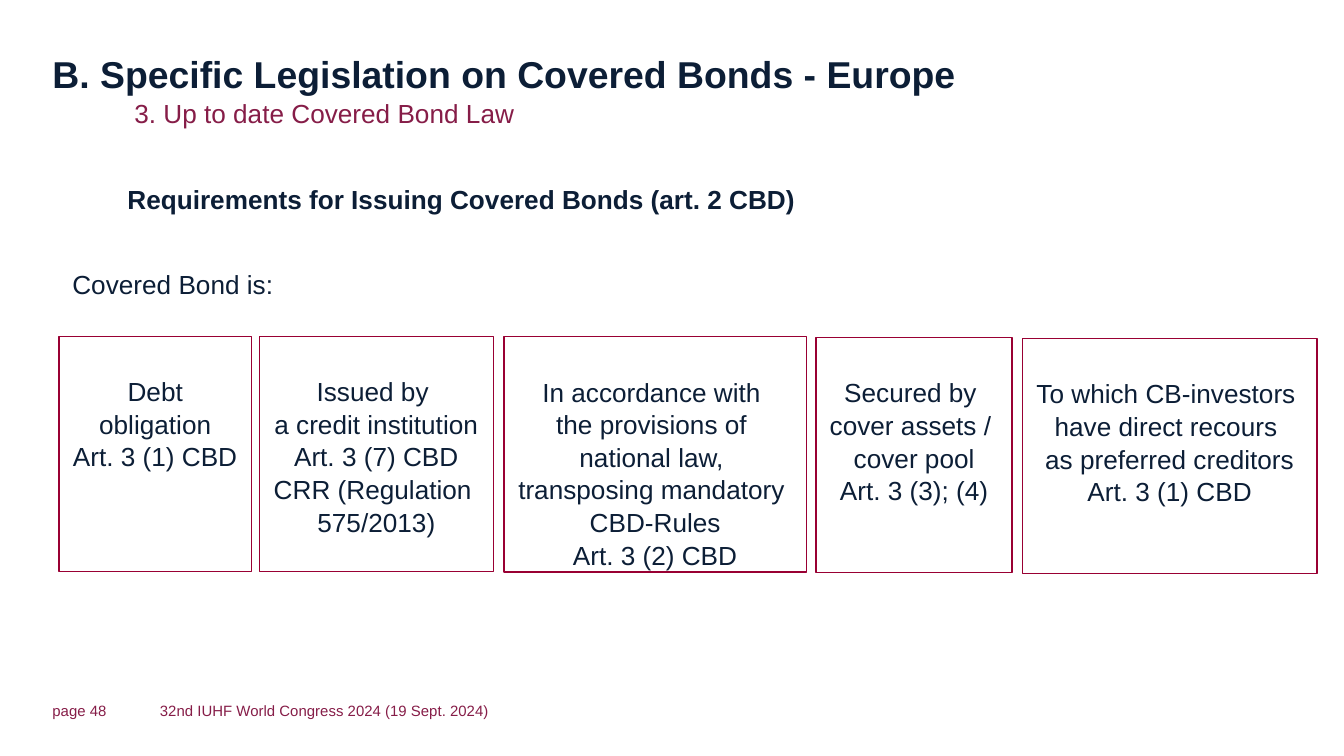
"""Build the slide on requirements for issuing covered bonds."""
from pptx import Presentation
from pptx.dml.color import RGBColor
from pptx.enum import shapes, text
from pptx.util import Pt

NAVY = RGBColor(0x0C, 0x1E, 0x36)
WINE = RGBColor(0x86, 0x1D, 0x48)
EDGE = RGBColor(0x99, 0x00, 0x33)

BODY = {"name": "Arial", "size": Pt(14), "bold": False}
HEAD = BODY | {"bold": True}
TITLE = HEAD | {"size": Pt(20)}
FOOT = BODY | {"size": Pt(8)}

LABELS = [
    ("B. Specific Legislation on Covered Bonds - Europe", (28.1, 26.6, 664, 24.5), 0, TITLE, NAVY),
    ("3. Up to date Covered Bond Law", (72, 51.8, 424, 17.3), 0, BODY, WINE),
    ("Requirements for Issuing Covered Bonds (art. 2 CBD)", (61.2, 94.3, 391, 24.5), 1, HEAD, NAVY),
    ("Covered Bond is:", (31.7, 139.7, 124, 24.5), 1, BODY, NAVY),
    ("page 48", (28.1, 375.8, 45.4, 9.4), 0, FOOT, WINE),
    ("32nd IUHF World Congress 2024 (19 Sept. 2024)", (85.7, 375.8, 321, 9.4), 0, FOOT, WINE),
]
BOXES = [
    (31.7, 180.2, 103, ["Debt", "obligation", "Art. 3 (1) CBD"]),
    (139, 180.2, 125.3, ["Issued by ", "a credit institution", "Art. 3 (7) CBD",
                         "CRR (Regulation ", "575/2013)"]),
    (270, 180.4, 162, ["In accordance with ", "the provisions of ", "national law, ",
                       "transposing mandatory ", "CBD-Rules", "Art. 3 (2) CBD"]),
    (437.2, 180.8, 105.1, ["Secured by ", "cover assets / ", "cover pool", "Art. 3 (3); (4)"]),
    (547.8, 181.3, 157.7, ["To which CB-investors ", "have direct recours ",
                           "as preferred creditors", "Art. 3 (1) CBD"]),
]
TALL = 126
LEAD = 1.04
PAD = (7.2, 3.6, 7.2, 3.6)
DROP = (7.2, 20.4, 7.2, 3.6)
SIDES = ("left", "top", "right", "bottom")


def write(frame, lines, pads, style, color, align, anchor, wrap):
    frame.text = "\n".join(lines)
    frame.word_wrap = wrap
    frame.vertical_anchor = anchor
    for side, pad in zip(SIDES, pads):
        setattr(frame, f"margin_{side}", Pt(pad))
    for para in frame.paragraphs:
        para.alignment = align
        para.line_spacing = LEAD
        for run in para.runs:
            for key, value in style.items():
                setattr(run.font, key, value)
            run.font.color.rgb = color


def main():
    deck = Presentation()
    deck.slide_width, deck.slide_height = Pt(720), Pt(405)
    slide = deck.slides.add_slide(deck.slide_layouts[6])
    for words, place, inset, style, color in LABELS:
        label = slide.shapes.add_textbox(*map(Pt, place))
        anchor = text.MSO_ANCHOR.MIDDLE if style is FOOT else text.MSO_ANCHOR.TOP
        write(label.text_frame, [words], PAD if inset else (0,) * 4, style, color,
              text.PP_ALIGN.LEFT, anchor, True)
    for left, top, wide, lines in BOXES:
        box = slide.shapes.add_shape(shapes.MSO_SHAPE.RECTANGLE, *map(Pt, (left, top, wide, TALL)))
        box.shadow.inherit = False
        box.fill.background()
        box.line.color.rgb = EDGE
        box.line.width = Pt(0.75)
        write(box.text_frame, lines, DROP, BODY, NAVY,
              text.PP_ALIGN.CENTER, text.MSO_ANCHOR.TOP, False)
    deck.save("out.pptx")


if __name__ == "__main__":
    main()
